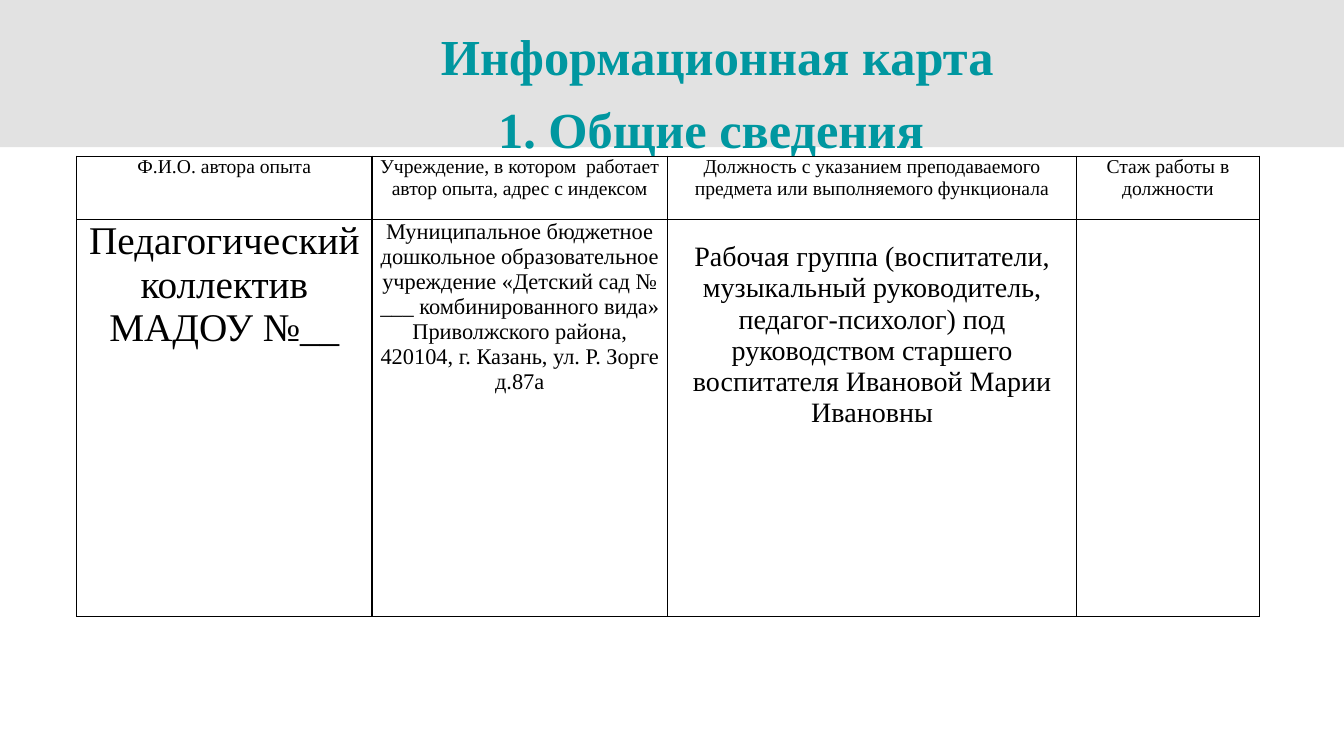
from dataclasses import dataclass

import pptx
import pptx.dml.color
import pptx.enum.shapes
import pptx.enum.text
import pptx.oxml
import pptx.oxml.ns
import pptx.util

Inches = pptx.util.Inches
Pt = pptx.util.Pt
RGBColor = pptx.dml.color.RGBColor
CENTER = pptx.enum.text.PP_ALIGN.CENTER

TEAL = RGBColor(0x00, 0x97, 0xA0)
GREY = RGBColor(0xD9, 0xD9, 0xD9)
BLACK = RGBColor(0x00, 0x00, 0x00)
FONT_NAME = "Times New Roman"


@dataclass(frozen=True)
class CellText:
    paragraphs: tuple[str, ...]
    size: int = 14
    top_margin: float = 0


HEADING = ("Информационная карта", "1. Общие сведения ")
COLUMN_WIDTHS = (2.93, 2.93, 4.06, 1.81)
ROW_HEIGHTS = (0.63, 3.94)
ROWS = (
    (
        CellText(("Ф.И.О. автора опыта",)),
        CellText(("Учреждение, в котором  работает автор опыта, адрес с индексом",)),
        CellText(("Должность с указанием преподаваемого предмета или выполняемого функционала",)),
        CellText(("Стаж работы в должности",)),
    ),
    (
        CellText(("Педагогический коллектив МАДОУ №__",), 28),
        CellText((
            "Муниципальное бюджетное дошкольное образовательное учреждение "
            "«Детский сад № ___ комбинированного вида» Приволжского района,",
            "420104, г. Казань, ул. Р. Зорге д.87а",
        ), 16),
        CellText((
            "Рабочая группа (воспитатели, музыкальный руководитель, педагог-психолог) "
            "под руководством старшего воспитателя Ивановой Марии Ивановны",
        ), 20, 0.22),
        CellText(("",)),
    ),
)


def write_paragraphs(text_frame, texts: tuple[str, ...], size: int,
                     color: RGBColor, bold: bool = False, gap: float = 0) -> None:
    for index, text in enumerate(texts):
        paragraph = text_frame.paragraphs[0] if index == 0 else text_frame.add_paragraph()
        paragraph.text = text
        paragraph.alignment = CENTER
        paragraph.space_before = Pt(gap if index else 0)
        paragraph.font.name = FONT_NAME
        paragraph.font.size = Pt(size)
        paragraph.font.bold = bold
        paragraph.font.color.rgb = color


def add_band(slide) -> None:
    band = slide.shapes.add_shape(
        pptx.enum.shapes.MSO_SHAPE.RECTANGLE, 0, 0, Inches(13.33), Inches(1.46))
    band.shadow.inherit = False
    band.line.fill.background()
    band.fill.solid()
    band.fill.fore_color.rgb = GREY
    color = band._element.spPr.find(".//" + pptx.oxml.ns.qn("a:srgbClr"))
    color.append(pptx.oxml.parse_xml(
        f'<a:alpha {pptx.oxml.ns.nsdecls("a")} val="76000"/>'))
    slide.shapes._spTree.insert(2, band._element)


def format_heading(slide) -> None:
    title = slide.shapes.title
    title.left, title.top = Inches(1.71), Inches(0.2)
    title.width, title.height = Inches(10.71), Inches(1.25)
    text_frame = title.text_frame
    text_frame.word_wrap = True
    text_frame.auto_size = pptx.enum.text.MSO_AUTO_SIZE.NONE
    text_frame.vertical_anchor = pptx.enum.text.MSO_ANCHOR.TOP
    text_frame.margin_left = Inches(0.2)
    write_paragraphs(text_frame, HEADING, 36, TEAL, bold=True, gap=9)


def add_borders(cell) -> None:
    properties = cell._tc.get_or_add_tcPr()
    for index, side in enumerate(("lnL", "lnR", "lnT", "lnB")):
        properties.insert(index, pptx.oxml.parse_xml(
            f'<a:{side} {pptx.oxml.ns.nsdecls("a")} w="{Pt(1)}"><a:solidFill>'
            f'<a:srgbClr val="{BLACK}"/></a:solidFill></a:{side}>'))


def format_cell(cell, content: CellText) -> None:
    cell.fill.background()
    cell.margin_left = cell.margin_right = Inches(0.07)
    cell.margin_top = Inches(content.top_margin)
    cell.margin_bottom = 0
    write_paragraphs(cell.text_frame, content.paragraphs, content.size, BLACK)
    add_borders(cell)


def add_information_table(slide) -> None:
    table = slide.shapes.add_table(
        len(ROWS), len(COLUMN_WIDTHS), Inches(0.76), Inches(1.55),
        Inches(sum(COLUMN_WIDTHS)), Inches(sum(ROW_HEIGHTS))).table
    table.first_row = False
    table.horz_banding = False
    for column, width in zip(table.columns, COLUMN_WIDTHS):
        column.width = Inches(width)
    for row, height, contents in zip(table.rows, ROW_HEIGHTS, ROWS):
        row.height = Inches(height)
        for cell, content in zip(row.cells, contents):
            format_cell(cell, content)


def main() -> None:
    presentation = pptx.Presentation()
    presentation.slide_width = Inches(13.33)
    presentation.slide_height = Inches(7.5)
    slide = presentation.slides.add_slide(presentation.slide_layouts[5])
    add_band(slide)
    format_heading(slide)
    add_information_table(slide)
    presentation.save("out.pptx")


if __name__ == "__main__":
    main()
